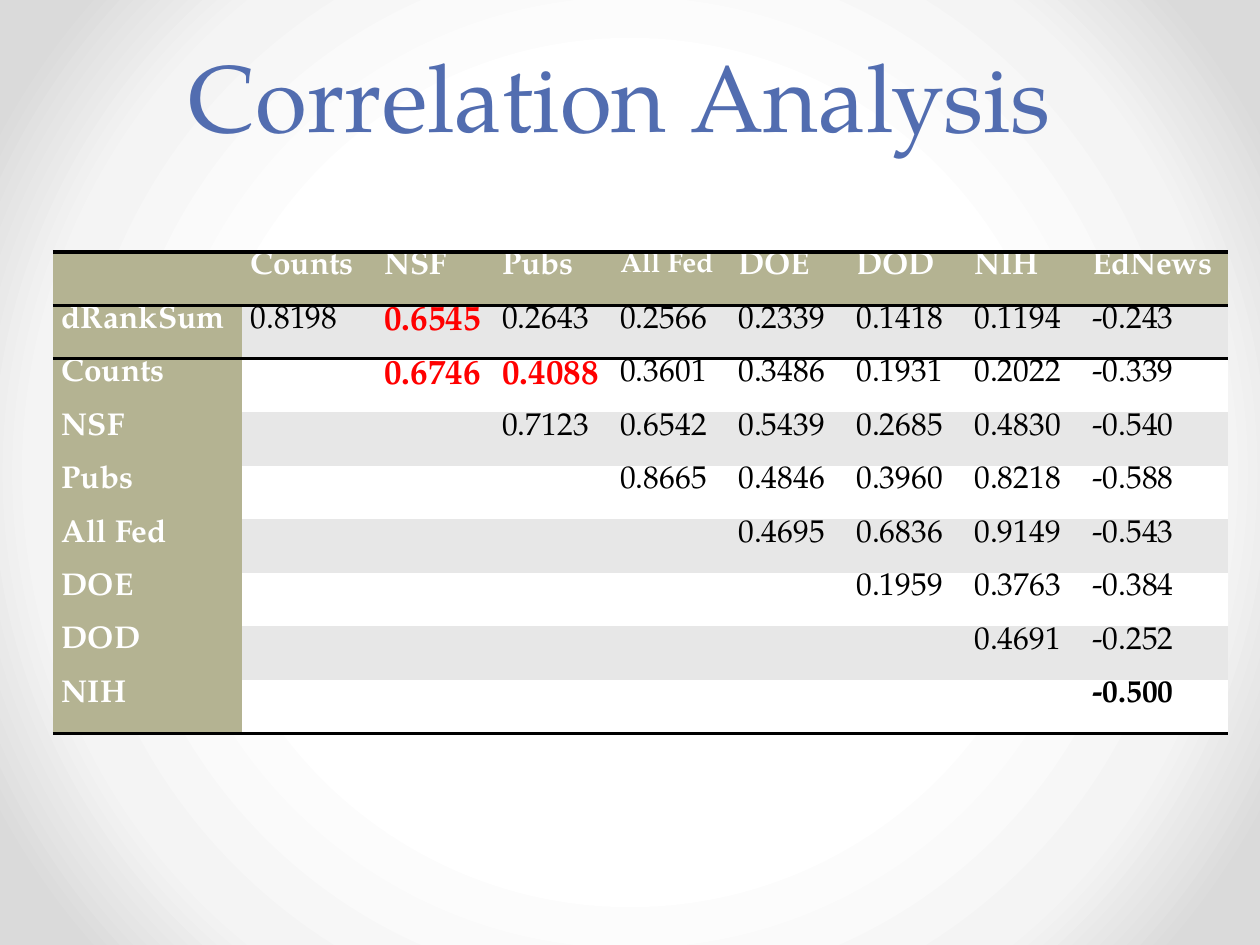
import pptx
import pptx.dml.color
import pptx.enum.text
import pptx.oxml
import pptx.oxml.ns
import pptx.util
from dataclasses import dataclass
from pptx.util import Inches


@dataclass(frozen=True)
class Theme:
    font: str = "TeX Gyre Pagella"
    title: str = "526DB0"
    head: str = "B4B392"
    band: str = "E7E7E7"
    white: str = "FFFFFF"
    black: str = "000000"
    red: str = "FF0000"
    title_size: int = 54
    title_leading: int = 58
    body_size: int = 18
    strong_size: int = 20
    small_size: int = 16
    rule: int = 2
    backdrop: tuple = ((50, "FFFFFF"), (76, "F4F4F4"), (92, "DADADA"))


THEME = Theme()
PLAIN_TABLE_STYLE = "{2D5ABB26-0587-4C30-8999-92F81FD0307C}"

LABELS = ["dRankSum", "Counts", "NSF", "Pubs", "All Fed", "DOE", "DOD", "NIH", "EdNews"]
# Upper triangle: each row starts one column further right
CORRELATIONS = [
    ["0.8198", "0.6545", "0.2643", "0.2566", "0.2339", "0.1418", "0.1194", "-0.243"],
    ["0.6746", "0.4088", "0.3601", "0.3486", "0.1931", "0.2022", "-0.339"],
    ["0.7123", "0.6542", "0.5439", "0.2685", "0.4830", "-0.540"],
    ["0.8665", "0.4846", "0.3960", "0.8218", "-0.588"],
    ["0.4695", "0.6836", "0.9149", "-0.543"],
    ["0.1959", "0.3763", "-0.384"],
    ["0.4691", "-0.252"],
    ["-0.500"],
]
HIGHLIGHTED = {(1, 2), (2, 2), (2, 3)}
BOLD_VALUE = (8, 8)


def rgb(value):
    return pptx.dml.color.RGBColor.from_string(value)


def add_run(p, text, size, color, bold=False):
    r = p.add_run()
    r.text = text
    r.font.name = THEME.font
    r.font.size = pptx.util.Pt(size)
    r.font.bold = bold
    r.font.color.rgb = rgb(color)


def paint_background(s):
    s.background.fill.gradient()
    grad = s.element.xpath(".//a:gradFill")[0]
    for child in list(grad):
        grad.remove(child)
    ns = pptx.oxml.ns.nsdecls("a")
    stops = "".join(
        f'<a:gs pos="{pos * 1000}"><a:srgbClr val="{color}"/></a:gs>'
        for pos, color in THEME.backdrop
    )
    grad.append(pptx.oxml.parse_xml(f"<a:gsLst {ns}>{stops}</a:gsLst>"))
    grad.append(pptx.oxml.parse_xml(
        f'<a:path {ns} path="circle">'
        '<a:fillToRect l="50000" t="50000" r="50000" b="50000"/></a:path>'
    ))


def add_title(s, text):
    sp = s.shapes.add_textbox(Inches(0.42), Inches(0.17), Inches(9), Inches(1.08))
    tf = sp.text_frame
    tf.word_wrap = True
    tf.vertical_anchor = pptx.enum.text.MSO_ANCHOR.BOTTOM
    p = tf.paragraphs[0]
    p.alignment = pptx.enum.text.PP_ALIGN.CENTER
    p.line_spacing = pptx.util.Pt(THEME.title_leading)
    add_run(p, text, THEME.title_size, THEME.title)


def add_border(cell, side):
    cell._tc.get_or_add_tcPr().append(pptx.oxml.parse_xml(
        f'<a:ln{side} {pptx.oxml.ns.nsdecls("a")} w="{pptx.util.Pt(THEME.rule)}">'
        f'<a:solidFill><a:srgbClr val="{THEME.black}"/></a:solidFill></a:ln{side}>'
    ))


def cell_text(row, col):
    if row == 0:
        return LABELS[col] if col else ""
    if col == 0:
        return LABELS[row - 1]
    return CORRELATIONS[row - 1][col - row] if col >= row else ""


def text_style(row, col, text):
    """Size, colour and weight of a cell's text."""
    if row == 0 or col == 0:
        small = row == 0 and text == "All Fed"
        return THEME.small_size if small else THEME.body_size, THEME.white, True
    if (row, col) in HIGHLIGHTED:
        return THEME.strong_size, THEME.red, True
    return THEME.body_size, THEME.black, (row, col) == BOLD_VALUE


def format_cell(cell, row, col, last_row):
    cell.margin_left = cell.margin_right = Inches(0.07)
    cell.margin_top = cell.margin_bottom = 0

    # Rules above and below the header, and under the last row
    if row == 0:
        add_border(cell, "T")
    if row in (0, last_row):
        add_border(cell, "B")
    elif row == 1:
        add_border(cell, "T")

    cell.fill.solid()
    if row == 0 or col == 0:
        color = THEME.head
    else:
        color = THEME.band if row % 2 else THEME.white
    cell.fill.fore_color.rgb = rgb(color)

    text = cell_text(row, col)
    p = cell.text_frame.paragraphs[0]
    if text:
        add_run(p, text, *text_style(row, col, text))
    else:
        p.font.size = pptx.util.Pt(THEME.body_size)


def add_correlation_table(s):
    count = len(LABELS)
    width, height = Inches(9.33), Inches(3.82)
    frame = s.shapes.add_table(count, count, Inches(0.42), Inches(2), width, height)
    table = frame.table
    table.first_row = table.horz_banding = False
    table._tbl.tblPr.find(pptx.oxml.ns.qn("a:tableStyleId")).text = PLAIN_TABLE_STYLE

    # Outer columns have their own widths; the others share the rest
    widths = {0: Inches(1.5), 1: Inches(1.06), count - 1: Inches(1.15)}
    shared = (width - sum(widths.values())) // (count - len(widths))
    for i, column in enumerate(table.columns):
        column.width = widths.get(i, shared)
    for i, row in enumerate(table.rows):
        row.height = height // count
        for j, cell in enumerate(row.cells):
            format_cell(cell, i, j, count - 1)


def main():
    prs = pptx.Presentation()
    prs.slide_width, prs.slide_height = Inches(10), Inches(7.5)
    s = prs.slides.add_slide(prs.slide_layouts[6])
    paint_background(s)
    add_title(s, "Correlation Analysis")
    add_correlation_table(s)
    prs.save("out.pptx")


if __name__ == "__main__":
    main()
